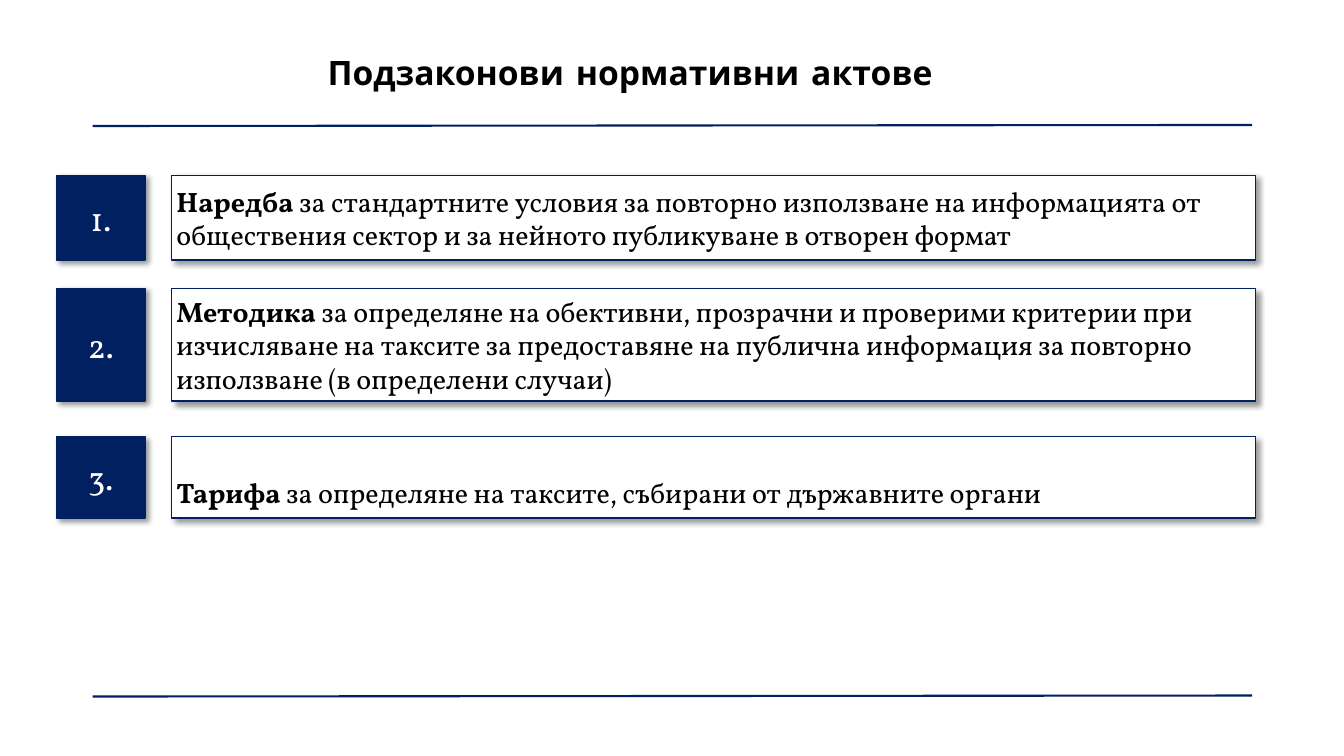
from lxml import etree
from pptx import Presentation
from pptx import util as u
from pptx.dml.color import RGBColor
from pptx.enum import shapes, text
from pptx.oxml.ns import qn

NAVY, WHITE, BLACK = "002060", "FFFFFF", "000000"


def tint(code):
    return RGBColor.from_string(code)


class Deck:
    face = "Vollkorn"
    head = "Comic Neue"
    inset = 0.05

    def __init__(self, wide, high):
        self.prs = Presentation()
        self.prs.slide_width = u.Inches(wide)
        self.prs.slide_height = u.Inches(high)
        self.slide = self.prs.slides.add_slide(self.prs.slide_layouts[5])

    def frame(self, shape, align, top=inset):
        frame = shape.text_frame
        frame.word_wrap = True
        frame.auto_size = text.MSO_AUTO_SIZE.NONE
        frame.vertical_anchor = text.MSO_ANCHOR.MIDDLE
        frame.margin_left = frame.margin_right = u.Inches(self.inset)
        frame.margin_top = u.Inches(top)
        frame.margin_bottom = u.Inches(self.inset)
        para = frame.paragraphs[0]
        para.alignment = align
        return para

    def font(self, para, face, size, color):
        para.font.name = face
        para.font.size = u.Pt(size)
        para.font.color.rgb = tint(color)

    def title(self, words, *box):
        shape = self.slide.shapes.title
        shape.left, shape.top, shape.width, shape.height = map(u.Inches, box)
        para = self.frame(shape, text.PP_ALIGN.CENTER)
        para.line_spacing = 0.9
        para.add_run().text = words
        self.font(para, self.head, 24, BLACK)
        para.font.bold = True

    def rule(self, left, right, start, end):
        line = self.slide.shapes.add_connector(
            shapes.MSO_CONNECTOR.STRAIGHT,
            *map(u.Inches, (left, start, right, end)))
        line.line.color.rgb = tint(NAVY)
        line.line.width = u.Pt(1.5)
        etree.SubElement(line._element.spPr, qn("a:effectLst"))

    def shadow(self, shape):
        shape.shadow.inherit = False
        fx = shape._element.spPr.find(qn("a:effectLst"))
        cast = etree.SubElement(
            fx, qn("a:outerShdw"), blurRad=str(u.Pt(4)), dist=str(u.Pt(3)),
            dir="2700000", algn="tl", rotWithShape="0")
        color = etree.SubElement(cast, qn("a:srgbClr"), val=BLACK)
        etree.SubElement(color, qn("a:alpha"), val="40000")

    def panel(self, box, fill, ink, size, runs, align, top=inset):
        shape = self.slide.shapes.add_shape(
            shapes.MSO_SHAPE.RECTANGLE, *map(u.Inches, box))
        shape.fill.solid()
        shape.fill.fore_color.rgb = tint(fill)
        shape.line.color.rgb = tint(NAVY)
        shape.line.width = u.Pt(1)
        self.shadow(shape)
        para = self.frame(shape, align, top)
        for words, bold in runs:
            run = para.add_run()
            run.text = words
            run.font.bold = bold
        self.font(para, self.face, size, ink)

    def row(self, num, top, high, lead, rest, pad):
        self.panel((0.56, top, 0.88, high), NAVY, WHITE, 24,
                   [(f"{num}.", False)], text.PP_ALIGN.CENTER)
        self.panel((1.7, top, 10.75, high), WHITE, BLACK, 20,
                   [(lead, True), (rest, False)], text.PP_ALIGN.LEFT, pad)


def main():
    deck = Deck(13.33, 7.5)
    for start in (1.25, 6.91):
        deck.rule(0.92, 12.42, start, start - 0.01)
    deck.title("Подзаконови нормативни актове ", 0.2, 0.4, 12.22, 0.69)
    rows = [
        (1.74, 0.84, "Наредба",
         " за стандартните условия за повторно използване на информацията"
         " от обществения сектор и за нейното публикуване в отворен формат",
         0.05),
        (2.86, 1.12, "Методика",
         " за определяне на обективни, прозрачни и проверими критерии при"
         " изчисляване на таксите за предоставяне на публична информация"
         " за повторно използване (в определени случаи)", 0.05),
        (4.33, 0.81, "Тарифа",
         " за определяне на таксите, събирани от държавните органи", 0.34),
    ]
    for num, row in enumerate(rows, 1):
        deck.row(num, *row)
    deck.prs.save("out.pptx")


if __name__ == "__main__":
    main()
